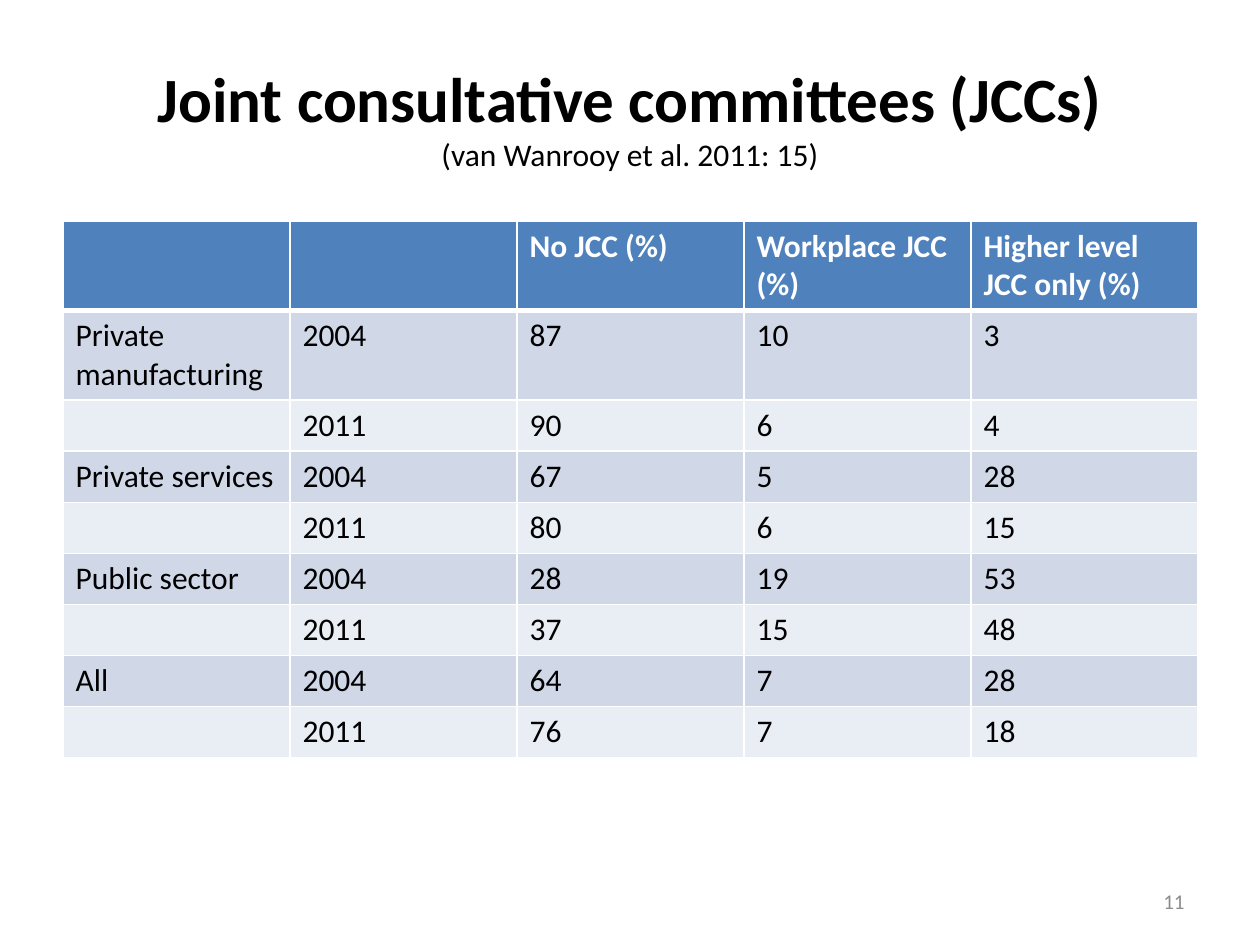
import pptx
import pptx.dml.color
import pptx.enum.text
import pptx.oxml
import pptx.oxml.ns
import pptx.util
from lxml import etree

RGBColor = pptx.dml.color.RGBColor
ALIGN = pptx.enum.text.PP_ALIGN
MIDDLE = pptx.enum.text.MSO_ANCHOR.MIDDLE

FONT = "Calibri"
BLACK = RGBColor(0x00, 0x00, 0x00)
WHITE = RGBColor(0xFF, 0xFF, 0xFF)
GREY = RGBColor(0x8C, 0x8C, 0x8C)
HEADER = RGBColor(0x4F, 0x81, 0xBD)
BANDS = (RGBColor(0xD0, 0xD8, 0xE8), RGBColor(0xE9, 0xED, 0xF4))

PX_PER_INCH = 126
COL_W = 227
ROW_H, TALL_ROW_H = 51, 89  # one and two lines of text

ROWS = [
    ("", "", "No JCC (%)", "Workplace JCC (%)", "Higher level JCC only (%)"),
    ("Private manufacturing", "2004", "87", "10", "3"),
    ("", "2011", "90", "6", "4"),
    ("Private services", "2004", "67", "5", "28"),
    ("", "2011", "80", "6", "15"),
    ("Public sector", "2004", "28", "19", "53"),
    ("", "2011", "37", "15", "48"),
    ("All", "2004", "64", "7", "28"),
    ("", "2011", "76", "7", "18"),
]


def px(n):
    return pptx.util.Emu(round(n * 914400 / PX_PER_INCH))


def add_run(p, text, size, color=BLACK, bold=False):
    r = p.add_run()
    r.text = text
    r.font.name = FONT
    r.font.size = pptx.util.Pt(size)
    r.font.bold = bold
    r.font.color.rgb = color


def add_title(s, heading, source):
    sp = s.shapes.title
    sp.left, sp.top, sp.width, sp.height = px(63), px(38), px(1134), px(157)
    tf = sp.text_frame
    tf.vertical_anchor = MIDDLE
    p = tf.paragraphs[0]
    p.alignment = ALIGN.CENTER
    add_run(p, heading, 36, bold=True)
    p.add_line_break()
    add_run(p, source, 18)


def set_borders(cell, bottom):
    tc_pr = cell._tc.get_or_add_tcPr()
    for side, width in (("L", 1), ("R", 1), ("T", 1), ("B", bottom)):
        ln = etree.SubElement(tc_pr, pptx.oxml.ns.qn(f"a:ln{side}"),
                              w=str(pptx.util.Pt(width)))
        fill = etree.SubElement(ln, pptx.oxml.ns.qn("a:solidFill"))
        etree.SubElement(fill, pptx.oxml.ns.qn("a:srgbClr"), val=str(WHITE))


def add_table(s, rows):
    heights = [TALL_ROW_H if i < 2 else ROW_H for i in range(len(rows))]
    cols = len(rows[0])
    table = s.shapes.add_table(len(rows), cols, px(63), px(221),
                               px(cols * COL_W), px(sum(heights))).table
    for col in table.columns:
        col.width = px(COL_W)
    for i, values in enumerate(rows):
        table.rows[i].height = px(heights[i])
        header = i == 0
        for j, text in enumerate(values):
            cell = table.cell(i, j)
            # The rule below the header is shared with the first body row
            set_borders(cell, bottom=3 if header else 1)
            cell.fill.solid()
            cell.fill.fore_color.rgb = HEADER if header else BANDS[(i - 1) % 2]
            if text:
                add_run(cell.text_frame.paragraphs[0], text, 18,
                        WHITE if header else BLACK, header)


def add_page_number(s, number):
    tf = s.shapes.add_textbox(px(903), px(876), px(294), px(50)).text_frame
    tf.word_wrap = True
    tf.vertical_anchor = MIDDLE
    p = tf.paragraphs[0]
    p.alignment = ALIGN.RIGHT
    add_run(p, number, 12, GREY)


def main():
    prs = pptx.Presentation()
    prs.slide_width, prs.slide_height = px(1260), px(945)
    s = prs.slides.add_slide(prs.slide_layouts[5])  # Title Only

    # Heading with its source below
    add_title(s, "Joint consultative committees (JCCs)",
              "(van Wanrooy et al. 2011: 15)")
    # Shares by sector and year
    add_table(s, ROWS)
    # Footer
    add_page_number(s, "11")

    prs.save("out.pptx")


if __name__ == "__main__":
    main()
